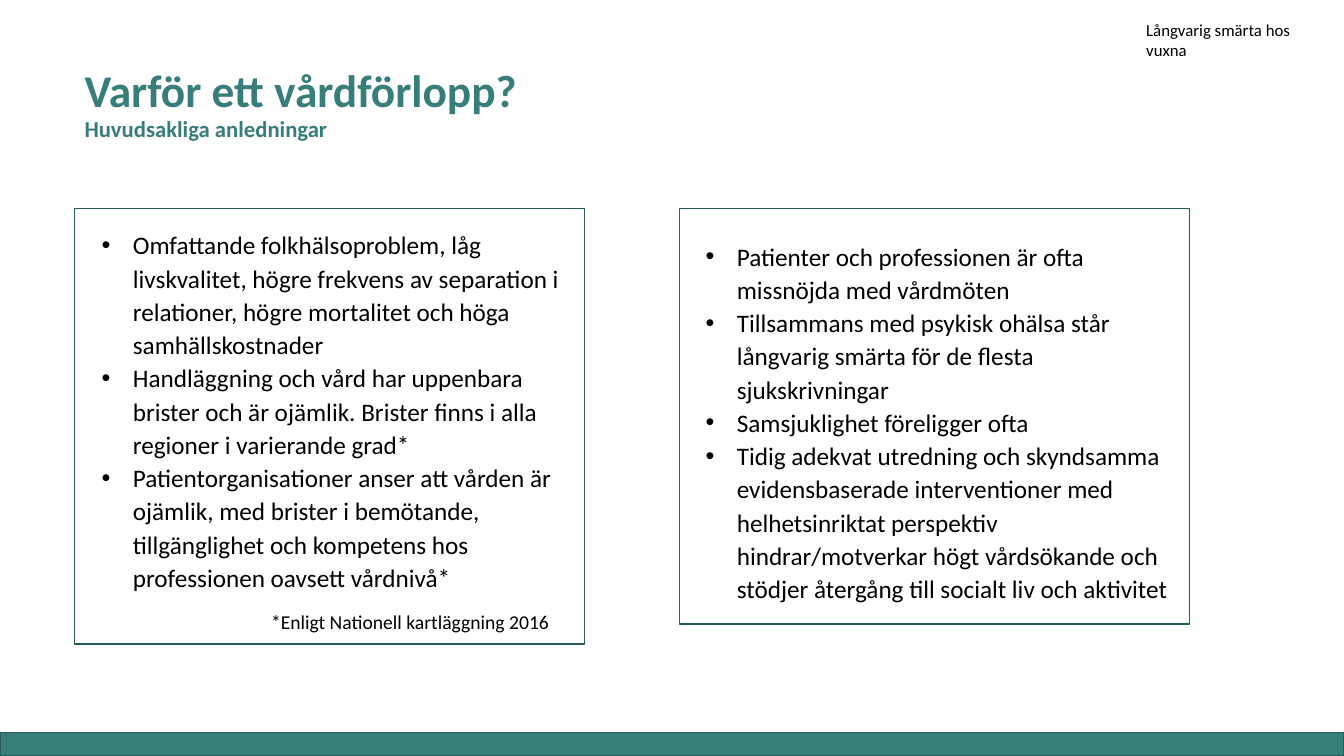
from lxml import etree
from pptx import Presentation
from pptx.dml.color import RGBColor
from pptx.enum.shapes import MSO_SHAPE
from pptx.enum.text import MSO_ANCHOR
from pptx.oxml.ns import qn
from pptx.util import Inches, Pt

RECTANGLE = MSO_SHAPE.RECTANGLE
BOTTOM = MSO_ANCHOR.BOTTOM
COLORS = {"teal": "377D7A", "dark teal": "295C5A", "black": "000000"}


def add_rectangle(left, top, width, height, fill=None):
    box = page.shapes.add_shape(RECTANGLE, Inches(left), Inches(top), Inches(width), Inches(height))
    box.shadow.inherit = False
    if fill:
        box.fill.solid()
        box.fill.fore_color.rgb = RGBColor.from_string(COLORS[fill])
    else:
        box.fill.background()
    box.line.color.rgb = RGBColor.from_string(COLORS["dark teal"])
    box.line.width = Pt(1)


def add_text(left, top, width, height, lines, size, bold=False, color="black", spacing=None, bullets=False):
    box = page.shapes.add_textbox(Inches(left), Inches(top), Inches(width), Inches(height))
    frame = box.text_frame
    frame.word_wrap = True
    for index, line in enumerate(lines):
        para = frame.paragraphs[0] if index == 0 else frame.add_paragraph()
        para.add_run().text = line
        if spacing:
            para.line_spacing = spacing
        if bullets:
            properties = para._p.get_or_add_pPr()
            properties.set("marL", str(Inches(0.31)))
            properties.set("indent", str(-Inches(0.31)))
            etree.SubElement(properties, qn("a:buFont")).set("typeface", "Arial")
            etree.SubElement(properties, qn("a:buChar")).set("char", "•")
        para.font.name = "Calibri"
        para.font.size = Pt(size)
        para.font.bold = bold
        para.font.color.rgb = RGBColor.from_string(COLORS[color])
    return frame


deck = Presentation()
deck.slide_width, deck.slide_height = Inches(13.33), Inches(7.5)
page = deck.slides.add_slide(deck.slide_layouts[6])

# Footer band
add_rectangle(0, 7.27, 13.33, 0.23, "teal")

# Title with a smaller second line
title = add_text(0.74, 0.79, 10, 0.67, ["Varför ett vårdförlopp?"], 32.4,
                 bold=True, color="teal", spacing=0.9)
title.vertical_anchor = BOTTOM
heading = title.paragraphs[0]
heading.add_line_break()
subtitle = heading.add_run()
subtitle.text = "Huvudsakliga anledningar"
subtitle.font.size = Pt(16.2)

# Framed columns of reasons: frame left, frame height, text left, text top, reasons
columns = [
    (0.74, 4.32, 0.91, 2.2, [
        "Omfattande folkhälsoproblem, låg livskvalitet, högre frekvens av separation i "
        "relationer, högre mortalitet och höga samhällskostnader",
        "Handläggning och vård har uppenbara brister och är ojämlik. Brister finns i alla "
        "regioner i varierande grad*",
        "Patientorganisationer anser att vården är ojämlik, med brister i bemötande, "
        "tillgänglighet och kompetens hos professionen oavsett vårdnivå*",
    ]),
    (6.74, 4.12, 6.9, 2.31, [
        "Patienter och professionen är ofta missnöjda med vårdmöten",
        "Tillsammans med psykisk ohälsa står långvarig smärta för de flesta sjukskrivningar",
        "Samsjuklighet föreligger ofta",
        "Tidig adekvat utredning och skyndsamma evidensbaserade interventioner med "
        "helhetsinriktat perspektiv hindrar/motverkar högt vårdsökande och stödjer "
        "återgång till socialt liv och aktivitet",
    ]),
]
for frame_left, frame_height, text_left, text_top, reasons in columns:
    add_rectangle(frame_left, 2.07, 5.06, frame_height)
    add_text(text_left, text_top, 4.83, 3.75, reasons, 18, spacing=1.1, bullets=True)

# Footnote and topic label
add_text(2.59, 5.98, 3.68, 0.41, ["*Enligt Nationell kartläggning 2016"], 14, spacing=1.1)
add_text(11.27, 0.15, 1.7, 0.5, ["Långvarig smärta hos vuxna"], 12)

deck.save("out.pptx")
